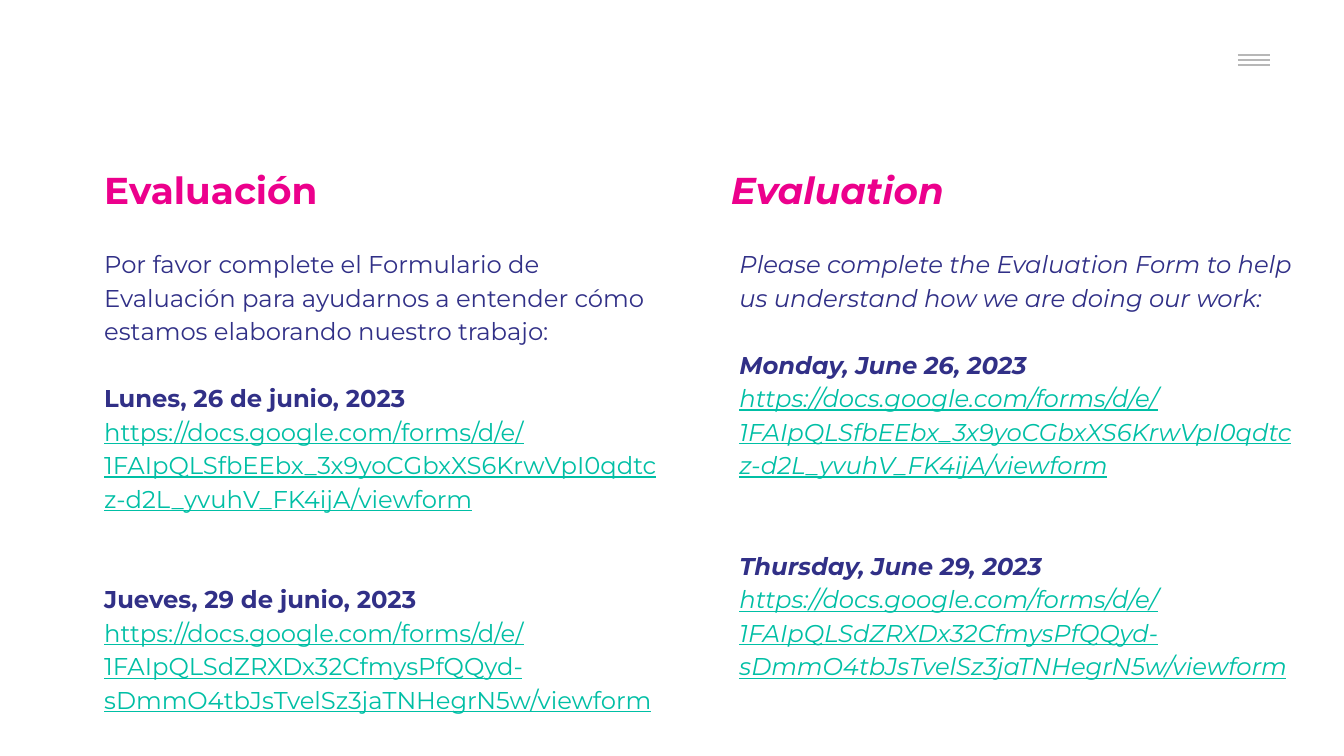
from dataclasses import dataclass

from lxml import etree
from pptx import Presentation
from pptx.dml.color import RGBColor
from pptx.enum.shapes import MSO_CONNECTOR, MSO_SHAPE
from pptx.enum.text import MSO_ANCHOR
from pptx.oxml.ns import qn
from pptx.slide import Slide
from pptx.text.text import TextFrame
from pptx.util import Inches, Pt

STRAIGHT = MSO_CONNECTOR.STRAIGHT
RECTANGLE = MSO_SHAPE.RECTANGLE
TOP = MSO_ANCHOR.TOP

WHITE = RGBColor(0xFF, 0xFF, 0xFF)
GRAY = RGBColor(0xB7, 0xB7, 0xB7)
PINK = RGBColor(0xEC, 0x00, 0x8C)
NAVY = RGBColor(0x31, 0x30, 0x87)
TEAL = RGBColor(0x00, 0xBF, 0xA5)

FONT = "Montserrat"
SLIDE_WIDTH = Inches(10)
SLIDE_HEIGHT = SLIDE_WIDTH * 9 // 16
CELL = SLIDE_WIDTH // 100
TITLE_ROW, TITLE_ROWS, TITLE_COLUMNS = 11.4, 5.9, 42.2
BODY_ROW = 17.23
LINE_SPACING = 1.15
BLANK_LINE = Pt(18)

MONDAY_FORM = (
    "https://docs.google.com/forms/d/e/"
    "1FAIpQLSfbEEbx_3x9yoCGbxXS6KrwVpI0qdtcz-d2L_yvuhV_FK4ijA/viewform"
)
THURSDAY_FORM = (
    "https://docs.google.com/forms/d/e/"
    "1FAIpQLSdZRXDx32CfmysPfQQyd-sDmmO4tbJsTvelSz3jaTNHegrN5w/viewform"
)


@dataclass(frozen=True)
class Area:
    column: float
    row: float
    columns: float
    rows: float

    def lengths(self) -> tuple[int, ...]:
        return tuple(
            round(cells * CELL)
            for cells in (self.column, self.row, self.columns, self.rows)
        )


@dataclass(frozen=True)
class Language:
    title: str
    request: str
    monday: str
    thursday: str
    title_column: float
    body: Area
    italic: bool


LANGUAGES = (
    Language(
        "Evaluación",
        "Por favor complete el Formulario de Evaluación para ayudarnos "
        "a entender cómo estamos elaborando nuestro trabajo:",
        "Lunes, 26 de junio, 2023",
        "Jueves, 29 de junio, 2023",
        6.77,
        Area(6.77, BODY_ROW, 43.8, 21.2),
        False,
    ),
    Language(
        "Evaluation",
        "Please complete the Evaluation Form to help us understand "
        "how we are doing our work:",
        "Monday, June 26, 2023",
        "Thursday, June 29, 2023",
        53.4,
        Area(54.04, BODY_ROW, 43.3, 30.1),
        True,
    ),
)


def add_text_area(slide: Slide, area: Area, filled: bool = False) -> TextFrame:
    box = slide.shapes.add_textbox(*area.lengths())
    if filled:
        box.fill.solid()
        box.fill.fore_color.rgb = WHITE
    frame = box.text_frame
    frame.word_wrap = True
    frame.vertical_anchor = TOP
    frame.margin_left = frame.margin_right = CELL
    frame.margin_top = frame.margin_bottom = CELL
    return frame


def write_paragraph(
    frame: TextFrame,
    text: str,
    size: int,
    color: RGBColor,
    italic: bool,
    bold: bool = False,
    underline: bool = False,
    blank_lines: int = 0,
    spacing: float = LINE_SPACING,
) -> None:
    first = frame.paragraphs[0]
    paragraph = frame.add_paragraph() if first.runs else first
    paragraph.add_run().text = text
    paragraph.line_spacing = spacing
    if blank_lines:
        paragraph.space_before = blank_lines * BLANK_LINE
    font = paragraph.font
    font.name = FONT
    font.size = Pt(size)
    font.color.rgb = color
    font.bold = bold
    font.italic = italic
    font.underline = underline


def add_language(slide: Slide, language: Language) -> None:
    italic = language.italic
    title_area = Area(language.title_column, TITLE_ROW, TITLE_COLUMNS, TITLE_ROWS)
    title = add_text_area(slide, title_area, filled=True)
    write_paragraph(title, language.title, 20, PINK, italic, bold=True, spacing=1.0)

    body = add_text_area(slide, language.body)
    write_paragraph(body, language.request, 13, NAVY, italic)
    sessions = (
        (language.monday, MONDAY_FORM, 1),
        (language.thursday, THURSDAY_FORM, 2),
    )
    for day, form, blank_lines in sessions:
        write_paragraph(
            body, day, 13, NAVY, italic, bold=True, blank_lines=blank_lines
        )
        write_paragraph(body, form, 13, TEAL, italic, underline=True)


def add_menu(slide: Slide) -> None:
    backing = slide.shapes.add_shape(RECTANGLE, *Area(88.6, 1.7, 9.4, 5).lengths())
    backing.shadow.inherit = False
    backing.fill.solid()
    backing.fill.fore_color.rgb = WHITE
    backing.line.fill.background()
    for index in range(3):
        left, top, width, _ = Area(92.1, 4.1 + 0.37 * index, 2.4, 0).lengths()
        bar = slide.shapes.add_connector(STRAIGHT, left, top, left + width, top)
        bar.line.color.rgb = GRAY
        bar.line.width = Pt(0.75)
        etree.SubElement(bar._element.spPr, qn("a:effectLst"))


def main() -> None:
    presentation = Presentation()
    presentation.slide_width = SLIDE_WIDTH
    presentation.slide_height = SLIDE_HEIGHT
    slide = presentation.slides.add_slide(presentation.slide_layouts[6])
    add_menu(slide)
    for language in LANGUAGES:
        add_language(slide, language)
    presentation.save("out.pptx")


if __name__ == "__main__":
    main()
